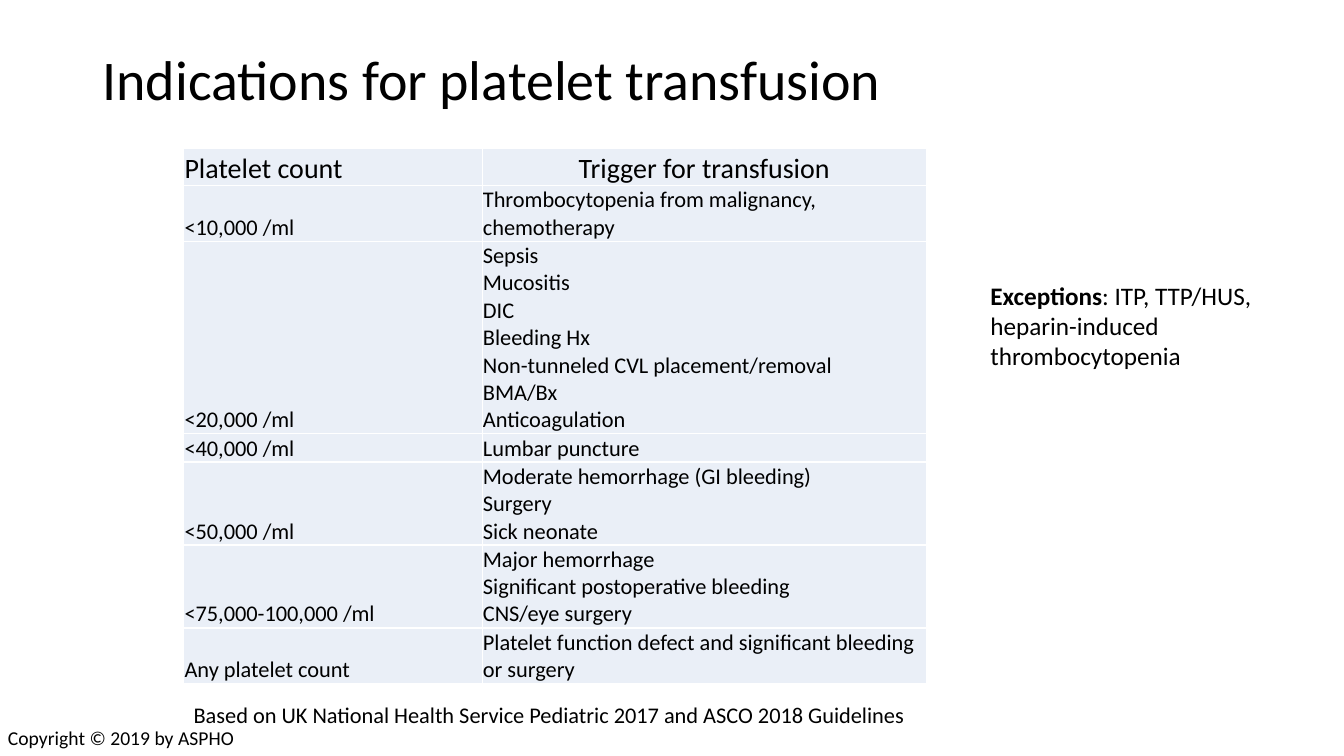
import pptx
import pptx.dml.color
import pptx.enum.text
import pptx.oxml.ns
import pptx.util
from lxml import etree

Cm = pptx.util.Cm
Pt = pptx.util.Pt
qn = pptx.oxml.ns.qn
ANCHOR = pptx.enum.text.MSO_ANCHOR
ALIGN = pptx.enum.text.PP_ALIGN

BLACK = pptx.dml.color.RGBColor(0x00, 0x00, 0x00)
WHITE = pptx.dml.color.RGBColor(0xFF, 0xFF, 0xFF)
PALE_BLUE = pptx.dml.color.RGBColor(0xEA, 0xEF, 0xF7)

HEADER = ("Platelet count", "Trigger for transfusion")
TRIGGERS = [
    ("<10,000 /ml", "Thrombocytopenia from malignancy, chemotherapy", ANCHOR.BOTTOM),
    ("<20,000 /ml",
     "Sepsis\nMucositis\nDIC\nBleeding Hx\vNon-tunneled CVL placement/removal\nBMA/Bx\nAnticoagulation",
     ANCHOR.BOTTOM),
    ("<40,000 /ml", "Lumbar puncture", ANCHOR.BOTTOM),
    ("<50,000 /ml", "Moderate hemorrhage (GI bleeding)\nSurgery\nSick neonate", ANCHOR.BOTTOM),
    ("<75,000-100,000 /ml",
     "Major hemorrhage\nSignificant postoperative bleeding\nCNS/eye surgery", ANCHOR.MIDDLE),
    ("Any platelet count",
     "Platelet function defect and significant bleeding or surgery", ANCHOR.MIDDLE),
]
COLUMN_WIDTHS = (7.52, 11.2)
ROW_HEIGHTS = (0.94, 0.64, 3.86, 0.61, 1.68, 1.68, 0.76)


def write(paragraph, text, size=16, bold=False, font="Calibri", color=BLACK):
    for index, line in enumerate(text.split("\v")):
        if index:
            paragraph.add_line_break()
            line_break = paragraph._p.findall(qn("a:br"))[-1]
            etree.SubElement(line_break, qn("a:rPr"), sz=str(size * 100))
        run = paragraph.add_run()
        run.text = line
        run.font.name = font
        run.font.size = Pt(size)
        run.font.bold = bold
        run.font.color.rgb = color


class SlideBuilder:
    def __init__(self, presentation):
        self.slide = presentation.slides.add_slide(presentation.slide_layouts[5])

    def title(self, text, left, top, width, height):
        title = self.slide.shapes.title
        title.left, title.top, title.width, title.height = map(Cm, (left, top, width, height))
        frame = title.text_frame
        frame.auto_size = pptx.enum.text.MSO_AUTO_SIZE.NONE
        frame.vertical_anchor = ANCHOR.MIDDLE
        paragraph = frame.paragraphs[0]
        paragraph.alignment = ALIGN.LEFT
        paragraph.line_spacing = 0.9
        write(paragraph, text, size=40)

    def text(self, parts, size, left, top, width, height):
        box = self.slide.shapes.add_textbox(*map(Cm, (left, top, width, height)))
        frame = box.text_frame
        frame.word_wrap = True
        frame.auto_size = pptx.enum.text.MSO_AUTO_SIZE.SHAPE_TO_FIT_TEXT
        for text, bold in parts:
            write(frame.paragraphs[0], text, size=size, bold=bold)

    def cell(self, cell, text, size=16, anchor=ANCHOR.BOTTOM, alignment=ALIGN.LEFT):
        cell.margin_left = cell.margin_right = cell.margin_top = Cm(0.02)
        cell.margin_bottom = 0
        cell.vertical_anchor = anchor
        cell.fill.solid()
        cell.fill.fore_color.rgb = PALE_BLUE
        self.borders(cell)
        frame = cell.text_frame
        for index, line in enumerate(text.split("\n")):
            paragraph = frame.add_paragraph() if index else frame.paragraphs[0]
            paragraph.alignment = alignment
            write(paragraph, line, size=size)

    def borders(self, cell):
        properties = cell._tc.get_or_add_tcPr()
        for index, side in enumerate(("lnL", "lnR", "lnT", "lnB")):
            line = etree.Element(qn("a:" + side), w=str(Pt(1)))
            fill = etree.SubElement(line, qn("a:solidFill"))
            etree.SubElement(fill, qn("a:srgbClr"), val=str(WHITE))
            properties.insert(index, line)

    def table(self, left, top, width, height):
        frame = self.slide.shapes.add_table(
            len(ROW_HEIGHTS), len(COLUMN_WIDTHS), *map(Cm, (left, top, width, height)))
        table = frame.table
        table.first_row = False
        table.horz_banding = False
        for column, column_width in zip(table.columns, COLUMN_WIDTHS):
            column.width = Cm(column_width)
        for row, row_height in zip(table.rows, ROW_HEIGHTS):
            row.height = Cm(row_height)
        self.cell(table.cell(0, 0), HEADER[0], size=20)
        self.cell(table.cell(0, 1), HEADER[1], size=20, alignment=ALIGN.CENTER)
        for row, (count, trigger, anchor) in enumerate(TRIGGERS, start=1):
            self.cell(table.cell(row, 0), count)
            self.cell(table.cell(row, 1), trigger, anchor=anchor)
        frame.height = Cm(height)


def main():
    presentation = pptx.Presentation()
    presentation.slide_width = Cm(33.87)
    presentation.slide_height = Cm(19.05)
    builder = SlideBuilder(presentation)
    builder.title("Indications for platelet transfusion", 2.33, 1.02, 29.21, 2.13)
    builder.table(4.63, 3.74, 18.72, 13.26)
    builder.text([("Exceptions", True),
                  (": ITP, TTP/HUS, heparin-induced thrombocytopenia", False)],
                 18, 24.71, 6.93, 8.31, 2.57)
    builder.text([("Based on UK National Health Service Pediatric 2017 and ASCO 2018 Guidelines", False)],
                 16, 4.63, 17.55, 18.95, 0.94)
    builder.text([("Copyright © 2019 by ASPHO", False)], 14, -0.05, 18.16, 8.64, 0.86)
    presentation.save("out.pptx")


if __name__ == "__main__":
    main()
